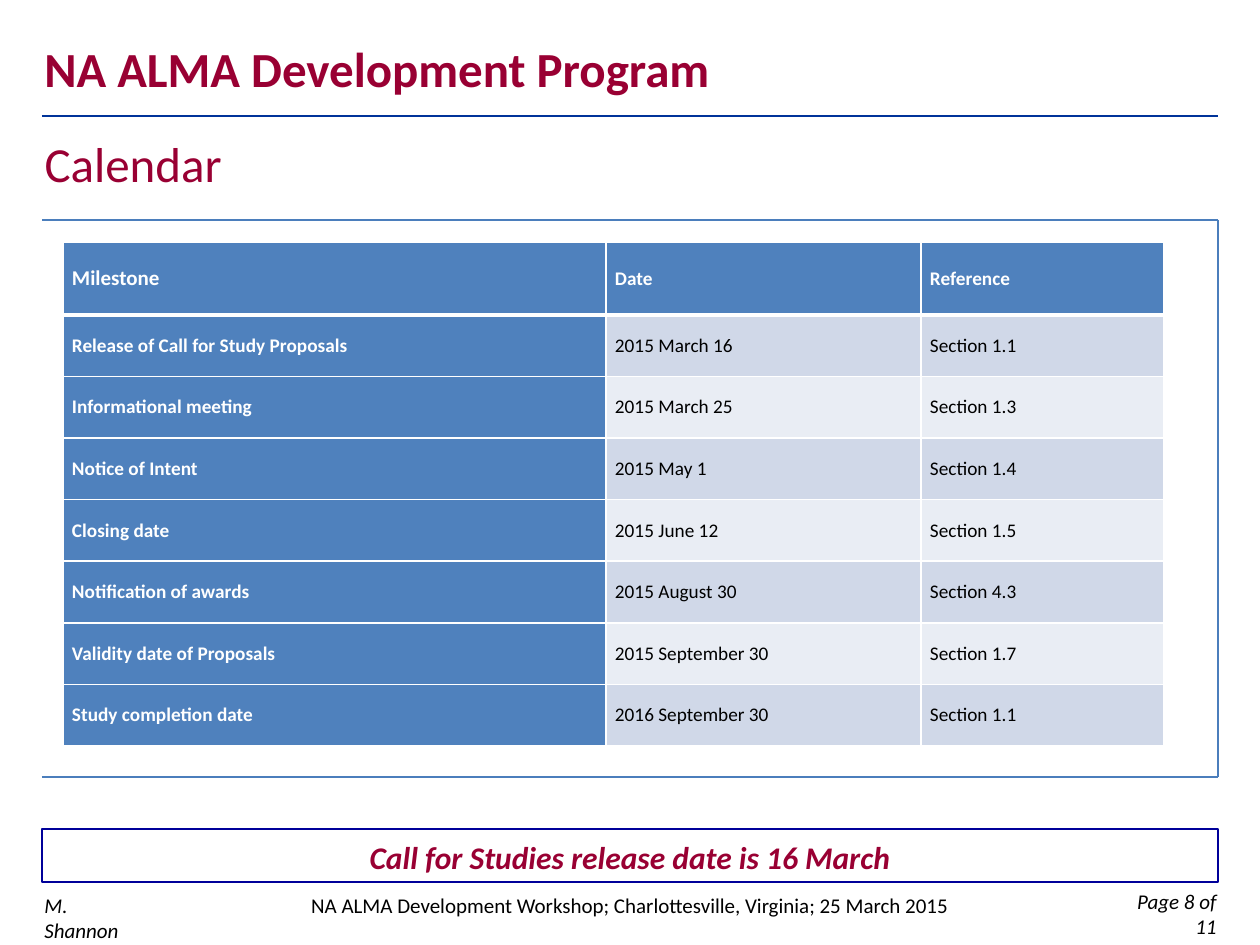
"""Build the calendar slide of the NA ALMA Development Program."""
from lxml import etree
from pptx import Presentation
from pptx import util as u
from pptx.dml.color import RGBColor
from pptx.enum import shapes, text
from pptx.oxml import ns

PX = 914400 / 126
FONT = "Calibri"
MAROON = RGBColor(0x99, 0x00, 0x33)
RULE_BLUE = RGBColor(0x00, 0x33, 0x99)
NAVY = RGBColor(0x00, 0x00, 0x99)
FRAME_BLUE = RGBColor(0x4B, 0x7E, 0xBC)
HEAD_BLUE = RGBColor(0x4F, 0x81, 0xBD)
BAND_DARK = RGBColor(0xD0, 0xD8, 0xE8)
BAND_LIGHT = RGBColor(0xE9, 0xED, 0xF4)
WHITE = RGBColor(0xFF, 0xFF, 0xFF)
BLACK = RGBColor(0x00, 0x00, 0x00)
LEFT, CENTER, RIGHT = text.PP_ALIGN.LEFT, text.PP_ALIGN.CENTER, text.PP_ALIGN.RIGHT


def px(*lengths):
    return [u.Emu(round(n * PX)) for n in lengths]


def write(tf, words, size, color, bold=False, italic=False, align=LEFT):
    tf.word_wrap = True
    p = tf.paragraphs[0]
    p.alignment = align
    r = p.add_run()
    r.text = words
    r.font.name, r.font.size = FONT, u.Pt(size)
    r.font.bold, r.font.italic = bold, italic
    r.font.color.rgb = color


prs = Presentation()
prs.slide_width, prs.slide_height = px(1260, 945)
s = prs.slides.add_slide(prs.slide_layouts[5])

title = s.shapes.title
title.left, title.top, title.width, title.height = px(32, 127, 1186, 72)
title.text_frame.auto_size = text.MSO_AUTO_SIZE.NONE
title.text_frame.vertical_anchor = text.MSO_ANCHOR.TOP
write(title.text_frame, "Calendar", 28, MAROON)

box = s.shapes.add_shape(shapes.MSO_SHAPE.RECTANGLE, *px(42, 829, 1176, 53))
box.shadow.inherit = False
box.fill.background()
box.line.color.rgb = NAVY
box.line.width = u.Pt(1.25)

for x1, y1, x2, y2, color, width in [
    (42, 116, 1218, 116, RULE_BLUE, 1.25),
    (1218, 220, 1218, 777, FRAME_BLUE, 0.75),
    (1218, 220, 42, 220, FRAME_BLUE, 0.75),
    (42, 777, 1218, 777, FRAME_BLUE, 0.75),
]:
    line = s.shapes.add_connector(shapes.MSO_CONNECTOR.STRAIGHT, *px(x1, y1, x2, y2))
    line.line.color.rgb = color
    line.line.width = u.Pt(width)
    etree.SubElement(line._element.spPr, ns.qn("a:effectLst"))

for place, words, size, color, bold, italic, align in [
    ((32, 32, 812, 72), "NA ALMA Development Program", 28, MAROON, True, False, LEFT),
    ((42, 832, 1176, 50), "Call for Studies release date is 16 March", 18, MAROON, True, True, CENTER),
    ((32, 886, 120, 38), "M. Shannon", 12, BLACK, False, True, LEFT),
    ((42, 886, 1176, 38), "NA ALMA Development Workshop; Charlottesville, Virginia; 25 March 2015",
     12, BLACK, False, False, CENTER),
    ((1100, 882, 129, 38), "Page 8 of 11", 12, BLACK, False, True, RIGHT),
]:
    tf = s.shapes.add_textbox(*px(*place)).text_frame
    write(tf, words, size, color, bold, italic, align)

rows = [
    ("Milestone", "Date", "Reference"),
    ("Release of Call for Study Proposals", "2015 March 16", "Section 1.1"),
    ("Informational meeting", "2015 March 25", "Section 1.3"),
    ("Notice of Intent", "2015 May 1", "Section 1.4"),
    ("Closing date", "2015 June 12", "Section 1.5"),
    ("Notification of awards", "2015 August 30", "Section 4.3"),
    ("Validity date of Proposals", "2015 September 30", "Section 1.7"),
    ("Study completion date", "2016 September 30", "Section 1.1"),
]
HEAD_H, TABLE_H = 73, 504
row_h = (TABLE_H - HEAD_H) / (len(rows) - 1)
table = s.shapes.add_table(len(rows), 3, *px(63, 242, 1101, TABLE_H)).table
table.first_col = True
for column, width in zip(table.columns, px(543, 315, 243)):
    column.width = width

for i, row in enumerate(rows):
    table.rows[i].height = px(row_h if i else HEAD_H)[0]
    for j, words in enumerate(row):
        cell = table.cell(i, j)
        heading = i == 0 or j == 0
        cell.vertical_anchor = text.MSO_ANCHOR.MIDDLE
        cell.margin_left, cell.margin_right, cell.margin_top, cell.margin_bottom = px(9, 9, 0, 0)
        write(cell.text_frame, words, 12 if i == j == 0 else 11, WHITE if heading else BLACK, heading)
        for side in "LRTB":
            thick = (i, side) in [(0, "B"), (1, "T")]
            ln = etree.SubElement(cell._tc.get_or_add_tcPr(), ns.qn(f"a:ln{side}"),
                                  w=str(u.Pt(3 if thick else 1)))
            fill = etree.SubElement(ln, ns.qn("a:solidFill"))
            etree.SubElement(fill, ns.qn("a:srgbClr"), val=str(WHITE))
        cell.fill.solid()
        cell.fill.fore_color.rgb = HEAD_BLUE if heading else BAND_DARK if i % 2 else BAND_LIGHT

prs.save("out.pptx")
